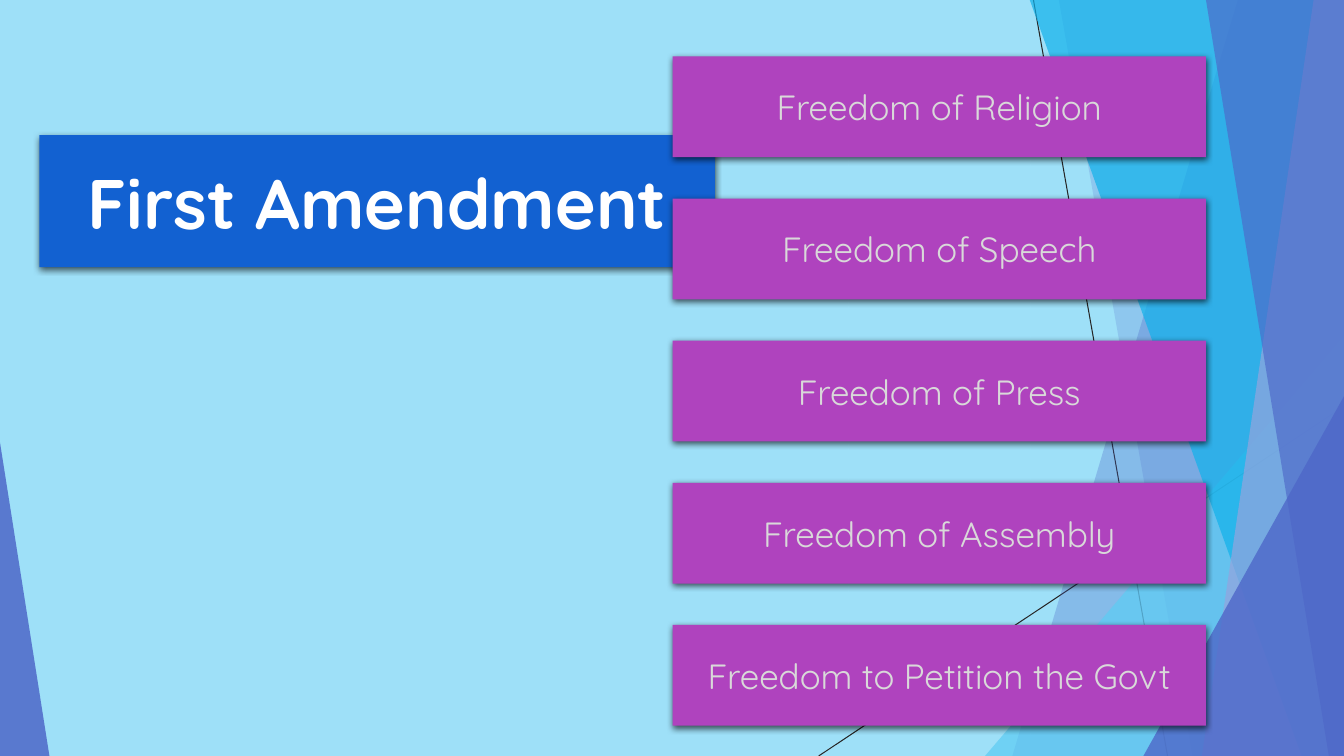
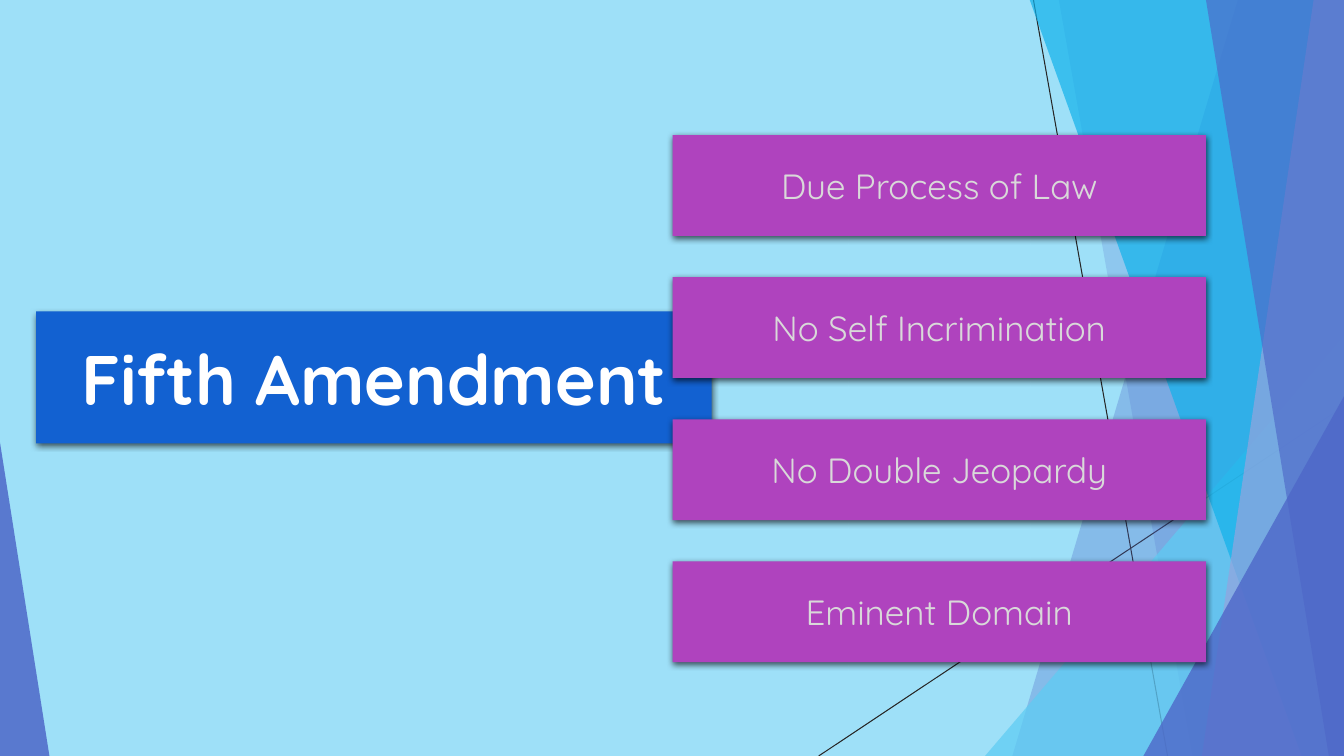
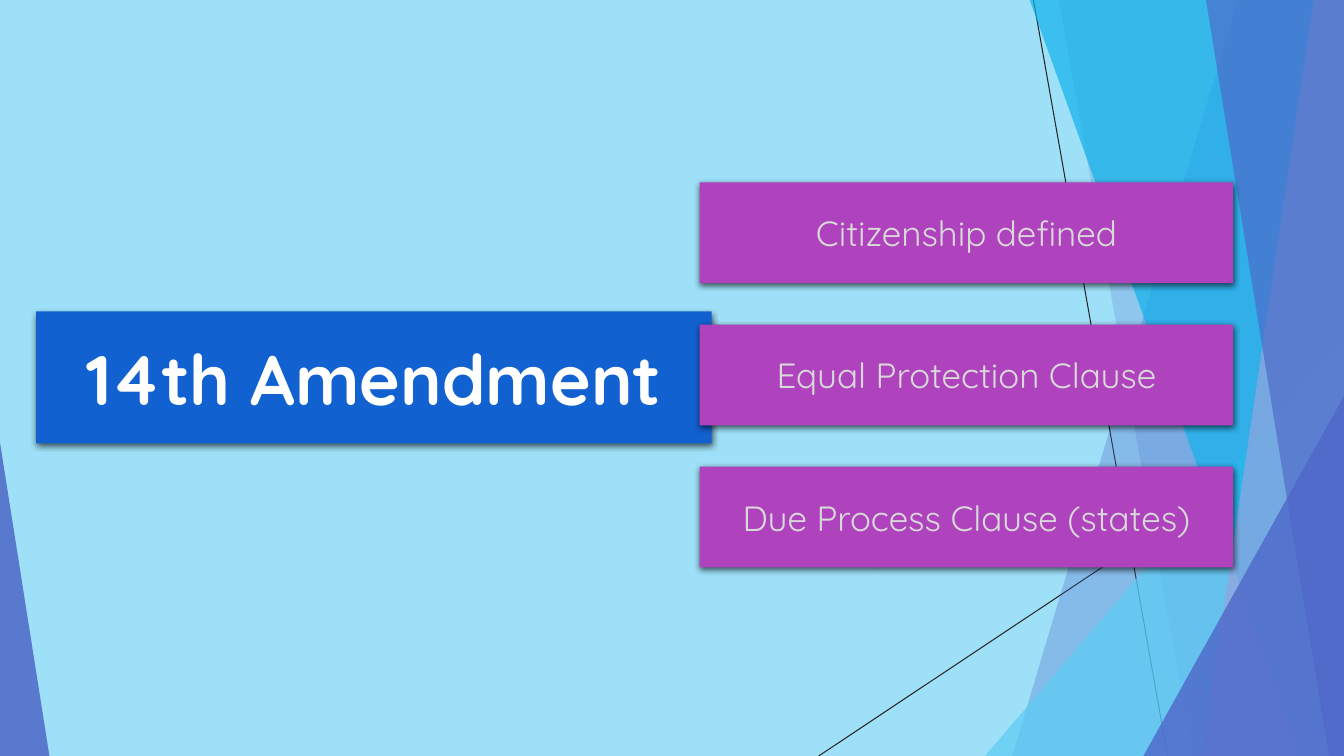
from pptx import Presentation, util as u
from pptx.dml.color import RGBColor
from pptx.enum import shapes, text
from pptx.oxml import parse_xml
from pptx.oxml.ns import nsdecls

SLIDES = [
    dict(title="First Amendment", at=(0.39, 1.34), list_at=(6.67, 0.56), items=[
        "Freedom of Religion",
        "Freedom of Speech",
        "Freedom of Press",
        "Freedom of Assembly",
        "Freedom to Petition the Govt",
    ]),
    dict(title="Fifth Amendment", at=(0.36, 3.09), list_at=(6.67, 1.34), items=[
        "Due Process of Law",
        "No Self Incrimination",
        "No Double Jeopardy",
        "Eminent Domain",
    ]),
    dict(title="14th Amendment", at=(0.36, 3.09), list_at=(6.94, 1.81), items=[
        "Citizenship defined",
        "Equal Protection Clause",
        "Due Process Clause (states)",
    ]),
]

W, H, TOP = 13.33, 7.5, -0.01
PITCH = 1.41
THEME = dict(
    font="Quicksand", back="9EE0F8", line="262626", weight=0.75,
    title=dict(size=(6.7, 1.31), fill="1261D1", ink="FFFFFF", points=50, bold=True),
    item=dict(size=(5.29, 1), fill="AF43BE", ink="D9D9D9", points=25, bold=False),
    blue="4E67C8", sky="5ECCF3", cyan="12B2EB", pale="95A4DE",
)
LINES = [(10.25, 0, 11.58, H), (W, 4.03, 8.12, H)]
BANDS = [
    ("band", 12.28, 10.04, "blue", 30),
    ("band", 10.5, 11.83, "blue", 20),
    ("right", 9.77, 3.33, "sky", 72),
    ("band", 10.21, 12.91, "cyan", 70),
    ("band", 13.03, 11.92, "pale", 70),
    ("band", 11.96, 13.18, "blue", 65),
    ("right", 11.34, 3.93, "blue", 80),
    ("left", 0.49, 4.39, "blue", 85),
]


def inch(*nums):
    return [u.Inches(n) for n in nums]


def paint(shape, tint):
    shape.shadow.inherit = False
    shape.fill.solid()
    shape.fill.fore_color.rgb = RGBColor.from_string(tint)
    shape.line.fill.background()


def fade(shape, share):
    tint = shape.element.xpath("./p:spPr/a:solidFill/a:srgbClr")[0]
    tint.append(parse_xml(f'<a:alpha {nsdecls("a")} val="{share * 1000}"/>'))


def wedge(slide, left, top, width, lean):
    shape = slide.shapes.add_shape(
        shapes.MSO_SHAPE.ISOSCELES_TRIANGLE, *inch(left, top, width, H - top))
    shape.adjustments[0] = lean
    return shape


def band(slide, high, low):
    path = slide.shapes.build_freeform(*inch(high, TOP))
    path.add_line_segments([inch(W, TOP), inch(W, H), inch(low, H)], close=True)
    return path.convert_to_shape()


def backdrop(slide):
    for ends in LINES:
        line = slide.shapes.add_connector(shapes.MSO_CONNECTOR.STRAIGHT, *inch(*ends))
        line.line.color.rgb = RGBColor.from_string(THEME["line"])
        line.line.width = u.Pt(THEME["weight"])
        line.element.spPr.append(parse_xml(f'<a:effectLst {nsdecls("a")}/>'))
    for kind, x, y, tint, share in BANDS:
        if kind == "band":
            shape = band(slide, x, y)
        elif kind == "right":
            shape = wedge(slide, x, y, W - x, 1)
        else:
            shape = wedge(slide, 0, y, x, 0)
        paint(shape, THEME[tint])
        fade(shape, share)


def share_backdrop(deck, layout):
    fill = layout.background.fill
    fill.solid()
    fill.fore_color.rgb = RGBColor.from_string(THEME["back"])
    for spot in list(layout.placeholders):
        layout.shapes.element.remove(spot.element)
    first = deck.slides.add_slide(layout)
    backdrop(first)
    for shape in list(first.shapes):
        layout.shapes.element.append(shape.element)
    return first


def card(slide, words, left, top, style):
    shape = slide.shapes.add_shape(
        shapes.MSO_SHAPE.RECTANGLE, *inch(left, top, *style["size"]))
    paint(shape, style["fill"])
    shape.element.xpath("./p:spPr/a:effectLst")[0].append(parse_xml(
        f'<a:outerShdw {nsdecls("a")} blurRad="{u.Pt(4.5)}" dist="{u.Pt(1.5)}" '
        'dir="5400000" algn="ctr" rotWithShape="0">'
        '<a:srgbClr val="000000"><a:alpha val="63000"/></a:srgbClr></a:outerShdw>'))
    frame = shape.text_frame
    frame.text = words
    frame.word_wrap = True
    frame.vertical_anchor = text.MSO_ANCHOR.MIDDLE
    para = frame.paragraphs[0]
    para.alignment = text.PP_ALIGN.CENTER
    font = para.runs[0].font
    font.name = THEME["font"]
    font.size = u.Pt(style["points"])
    font.bold = style["bold"]
    font.color.rgb = RGBColor.from_string(style["ink"])


def main():
    deck = Presentation()
    deck.slide_width, deck.slide_height = inch(W, H)
    layout = deck.slide_layouts[6]
    slide = share_backdrop(deck, layout)
    for order, data in enumerate(SLIDES):
        if order:
            slide = deck.slides.add_slide(layout)
        card(slide, data["title"], *data["at"], THEME["title"])
        left, top = data["list_at"]
        for row, words in enumerate(data["items"]):
            card(slide, words, left, top + row * PITCH, THEME["item"])
    deck.save("out.pptx")


if __name__ == "__main__":
    main()
